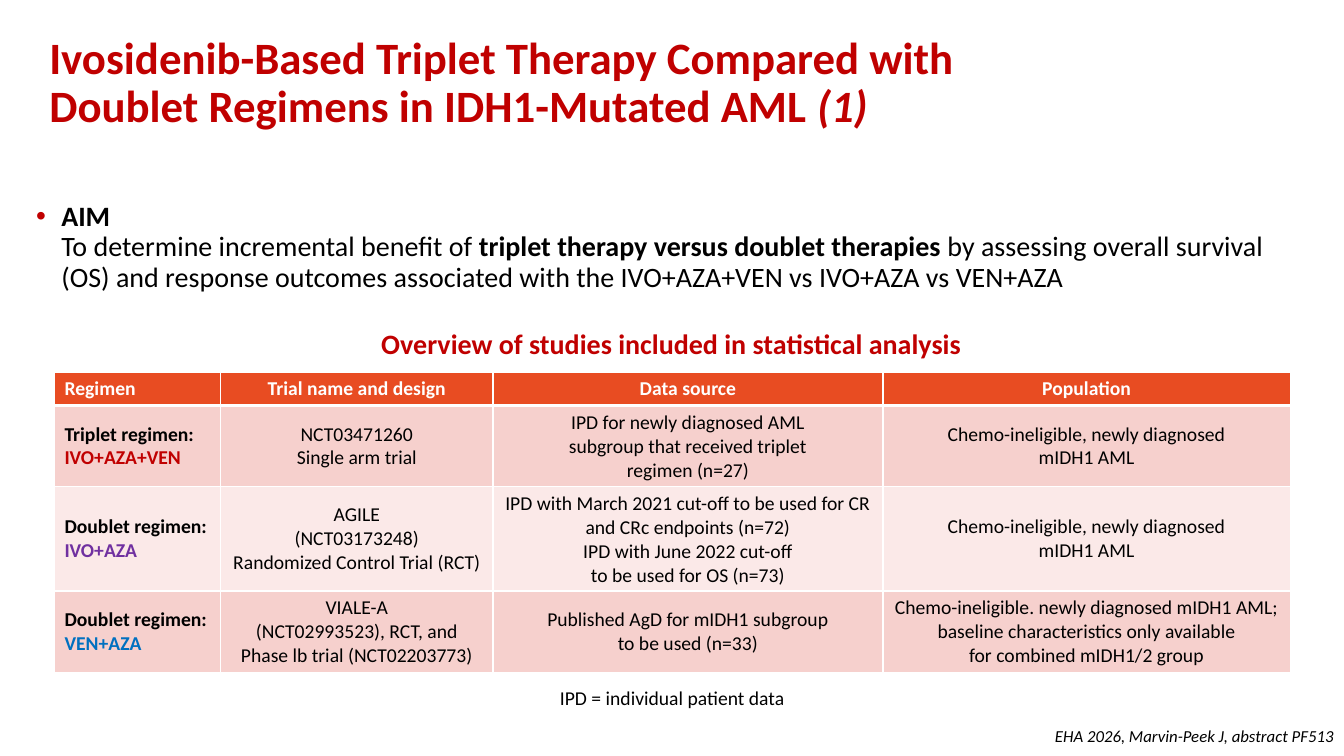
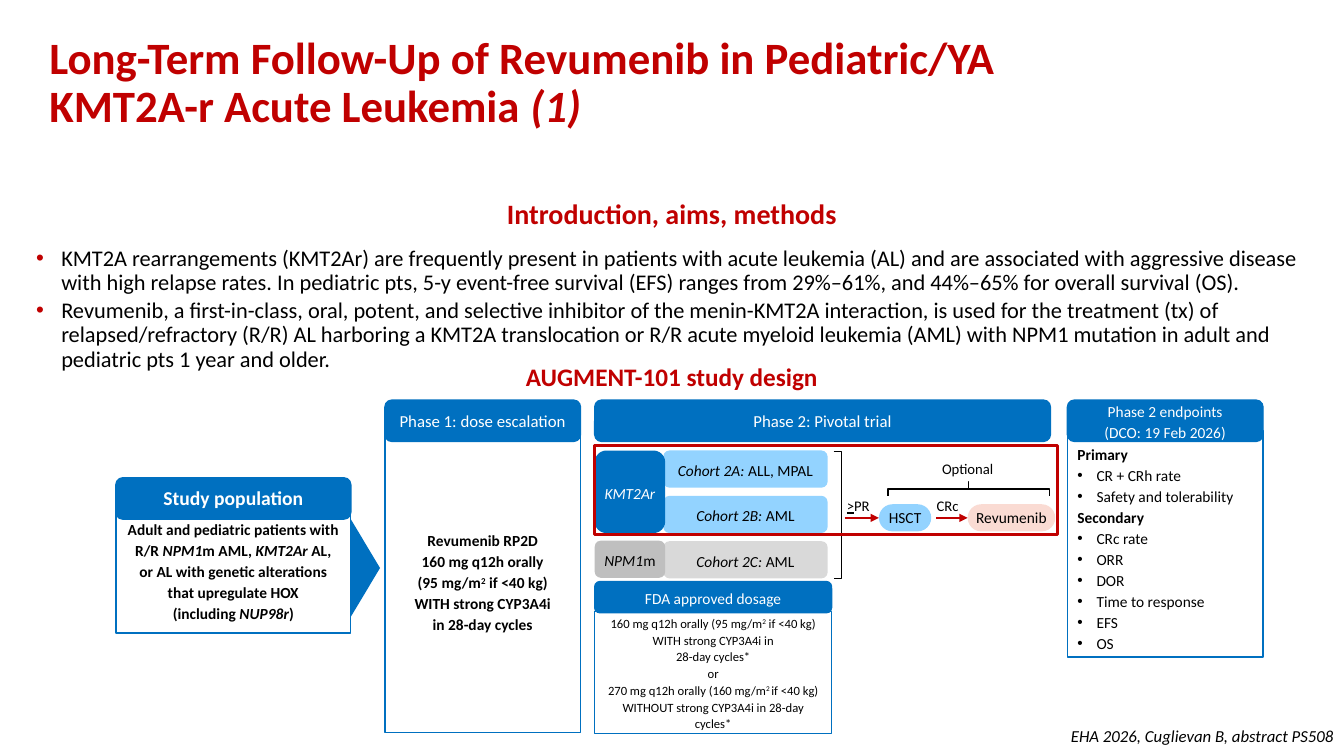
from pptx import Presentation
from pptx.dml.color import RGBColor
from pptx.enum.shapes import MSO_CONNECTOR as Line, MSO_SHAPE as Kind
from pptx.enum.text import MSO_ANCHOR as Anchor, MSO_AUTO_SIZE as Fit, PP_ALIGN as Align
from pptx.oxml import parse_xml
from pptx.oxml.ns import nsdecls
from pptx.util import Pt

HUES = {
    "red": "C00000", "black": "000000", "white": "FFFFFF", "blue": "0070C0",
    "sky": "93D3FF", "grey": "D9D9D9", "steel": "BFBFBF", "blush": "FADBD3",
    "orange": "E84C22", "rose": "F6D0CD", "pale": "FBE9E8", "plum": "7030A0",
}
FACE = "Calibri"


def hue(name):
    return RGBColor.from_string(HUES[name])


def node(tag, attrs="", inner=""):
    return parse_xml(f"<a:{tag} {nsdecls('a')} {attrs}>{inner}</a:{tag}>")


# Text
def style(run, size, color, marks):
    font = run.font
    font.name, font.size, font.color.rgb = FACE, Pt(size), hue(color)
    font.bold, font.italic = "b" in marks, "i" in marks
    if "u" in marks:
        font.underline = True
    if "^" in marks:
        run._r.get_or_add_rPr().set("baseline", "30000")


def bullet(para, dent, color):
    props = para._p.get_or_add_pPr()
    props.set("marL", str(Pt(dent)))
    props.set("indent", str(-Pt(dent)))
    props.append(node("buClr", inner=f'<a:srgbClr val="{HUES[color]}"/>'))
    props.append(node("buFont", 'typeface="Arial"'))
    props.append(node("buChar", 'char="•"'))


def put(frame, lines, size, color="black", marks="", align=Align.CENTER,
        lead=None, gap=0, dent=13.7, dot="black"):
    """A line is text or a list of (text, marks); a leading • makes a bullet."""
    for i, line in enumerate(lines):
        para = frame.add_paragraph() if i else frame.paragraphs[0]
        parts = [(line, "")] if isinstance(line, str) else line
        if parts[0][0].startswith("•"):
            bullet(para, dent, dot)
            parts = [(parts[0][0][1:], parts[0][1])] + parts[1:]
        para.alignment, para.line_spacing = align, lead
        para.space_before = Pt(gap if i else 0)
        for text, extra in parts:
            if text == "\n":
                para.add_line_break()
                continue
            run = para.add_run()
            run.text = text
            style(run, size, color, marks + extra)


def label(slide, box, lines, size, wrap=False, **look):
    frame = slide.shapes.add_textbox(*map(Pt, box)).text_frame
    frame.word_wrap = wrap
    put(frame, lines, size, **look)


# Shapes
def block(slide, kind, box, fill=None, line=None, width=1.0):
    shape = slide.shapes.add_shape(kind, *map(Pt, box))
    shape.shadow.inherit = False
    if fill:
        shape.fill.solid()
        shape.fill.fore_color.rgb = hue(fill)
    else:
        shape.fill.background()
    if line:
        shape.line.color.rgb = hue(line)
        shape.line.width = Pt(width)
    else:
        shape.line.fill.background()
    return shape


def tile(slide, box, fill, lines, size=11, line=None, kind=Kind.ROUNDED_RECTANGLE,
         side=7.2, anchor=Anchor.MIDDLE, lead=Pt(15), **look):
    shape = block(slide, kind, box, fill, line)
    frame = shape.text_frame
    frame.word_wrap, frame.vertical_anchor = True, anchor
    frame.margin_left = frame.margin_right = Pt(side)
    put(frame, lines, size, lead=lead, **look)
    return shape


def header(slide, box, lines, size, marks=""):
    tile(slide, box, "blue", lines, size, "blue", color="white", marks=marks)


def card(slide, box, head, large, lines, tall=29.5, bold="", **look):
    x, y, w, h = box
    drop = 21.6
    tile(slide, (x, y + drop, w, h - drop), "white", lines, line="blue",
         kind=Kind.RECTANGLE, **look)
    header(slide, (x, y, w, tall), head, large, bold)


def arrow(slide, start, end, y, goal):
    line = slide.shapes.add_connector(Line.STRAIGHT, Pt(start), Pt(y), Pt(end), Pt(y))
    line.end_connect(goal, 1)
    line.line.color.rgb, line.line.width = hue("red"), Pt(1.5)
    line.line._get_or_add_ln().append(node("tailEnd", 'type="triangle"'))
    line._element.spPr.append(node("effectLst"))


# Shared parts of a slide
def start(deck, title, source):
    slide = deck.slides.add_slide(deck.slide_layouts[5])
    head = slide.shapes.title
    head.left, head.top, head.width, head.height = map(Pt, (0, -1, 741, 122))
    frame = head.text_frame
    frame.word_wrap, frame.auto_size = True, Fit.NONE
    frame.vertical_anchor = Anchor.MIDDLE
    put(frame, [[(title + " ", ""), ("(1)", "i")]], 32, "red", "b", Align.LEFT, 0.9)
    frame.paragraphs[0]._p.get_or_add_pPr().set("marL", str(Pt(28)))
    label(slide, (744, 515, 216, 22), [source], 12, marks="i", align=Align.RIGHT)
    return slide


def points(slide, box, lines, size):
    label(slide, box, lines, size, wrap=True, align=Align.LEFT, lead=0.9,
          gap=3, dent=18, dot="red")


def caption(slide, box, text, size):
    label(slide, box, [text], size, color="red", marks="b")


# Table of studies
def border(cell, top, low):
    props = cell._tc.get_or_add_tcPr()
    paint = f'<a:solidFill><a:srgbClr val="{HUES["white"]}"/></a:solidFill>'
    for i, (side, width) in enumerate(zip("LRTB", (1, 1, top, low))):
        props.insert(i, node(f"ln{side}", f'w="{Pt(width)}"', paint))


def studies(slide, box, rows, tints):
    widths, heights = (118.8, 194.4, 278.6, 290.9), (24, 58, 74, 58)
    table = slide.shapes.add_table(len(rows), len(widths), *map(Pt, box)).table
    for col, width in zip(table.columns, widths):
        col.width = Pt(width)
    for i, row in enumerate(rows):
        table.rows[i].height = Pt(heights[i])
        for j, text in enumerate(row):
            cell = table.cell(i, j)
            cell.vertical_anchor = Anchor.MIDDLE
            cell.fill.solid()
            cell.fill.fore_color.rgb = hue(
                "orange" if i == 0 else "rose" if i % 2 else "pale")
            border(cell, 3 if i == 1 else 1, 1 if i else 3)
            put(cell.text_frame, text.split("\n"), 14, "black" if i else "white",
                "" if i and j else "b", Align.CENTER if j else Align.LEFT)
        if i:
            name = table.cell(i, 0).text_frame.paragraphs[1].runs[0]
            name.font.color.rgb = hue(tints[i - 1])


# Phase 2 flow
def pivotal(slide, x, y):
    header(slide, (x, y, 325.5, 29.5), ["Phase 2: Pivotal trial"], 12)
    cohorts = (("A", "ALL, MPAL", "sky"), ("B", "AML", "sky"), ("C", "AML", "grey"))
    for i, (mark, group, fill) in enumerate(cohorts):
        tile(slide, (x + 49, y + 36 + 32.4 * i, 117.4, 26.6), fill,
             [[(f"Cohort 2{mark}: ", "i"), (group, "")]])
    tile(slide, (x, y + 36, 50.4, 59), "blue", ["KMT2Ar"], side=2.9,
         color="white", marks="i")
    tile(slide, (x, y + 100.4, 50.4, 26.6), "steel", [[("NPM1", "i"), ("m", "")]],
         side=2.9)
    # Steps after response
    for left, top, width, text in ((172.8, 65.5, 31, [(">", "u"), ("PR", "")]),
                                   (236.9, 65.5, 30.2, "CRc"),
                                   (240.5, 38.9, 51.8, "Optional")):
        label(slide, (x + left, y + top, width, 20.2), [text], 10.5)
    pills = [tile(slide, (x + left, y + 74.4, width, 19.4), fill, [text],
                  side=2.9, lead=None)
             for left, width, fill, text in ((203, 37.4, "sky", "HSCT"),
                                             (266.4, 62.6, "blush", "Revumenib"))]
    for pill in pills:
        pill.adjustments[0] = 0.5
    arrow(slide, x + 178.6, x + 203, y + 84.1, pills[0])
    arrow(slide, x + 244, x + 266.4, y + 84.1, pills[1])
    # Brackets and frame
    clasp = block(slide, Kind.RIGHT_BRACKET, (x + 170.6, y + 36.7, 5.8, 90.7),
                  line="black")
    clasp.adjustments[0] = 0
    brace = block(slide, Kind.RIGHT_BRACE, (x + 262.1, y + 5.8, 10.1, 115.2),
                  line="black")
    brace.adjustments[0], brace.rotation = 0, 270
    block(slide, Kind.RECTANGLE, (x, y + 32.4, 330.5, 63.4), line="red", width=2.25)


# Slides
def triplet(deck):
    slide = start(deck, "Ivosidenib-Based Triplet Therapy Compared with Doublet "
                  "Regimens in IDH1-Mutated AML",
                  "EHA 2026, Marvin-Peek J, abstract PF513")
    points(slide, (18.7, 141, 923, 374), [[
        ("•AIM", "b"), ("\n", ""), ("To determine incremental benefit of ", ""),
        ("triplet therapy versus doublet therapies ", "b"),
        ("by assessing overall survival (OS) and response outcomes associated with "
         "the IVO+AZA+VEN vs IVO+AZA vs VEN+AZA", "")]], 20)
    caption(slide, (263.5, 229.7, 432, 31.7),
            "Overview of studies included in statistical analysis", 20)
    ready = "Chemo-ineligible, newly diagnosed\nmIDH1 AML"
    studies(slide, (38.9, 265.7, 882.7, 214), (
        ("Regimen", "Trial name and design", "Data source", "Population"),
        ("Triplet regimen:\nIVO+AZA+VEN", "NCT03471260\nSingle arm trial",
         "IPD for newly diagnosed AML\nsubgroup that received triplet\n"
         "regimen (n=27)", ready),
        ("Doublet regimen:\nIVO+AZA",
         "AGILE\n(NCT03173248)\nRandomized Control Trial (RCT)",
         "IPD with March 2021 cut-off to be used for CR\nand CRc endpoints (n=72)\n"
         "IPD with June 2022 cut-off\nto be used for OS (n=73)", ready),
        ("Doublet regimen:\nVEN+AZA",
         "VIALE-A\n(NCT02993523), RCT, and\nPhase lb trial (NCT02203773)",
         "Published AgD for mIDH1 subgroup\nto be used (n=33)",
         "Chemo-ineligible. newly diagnosed mIDH1 AML;\nbaseline characteristics "
         "only available\nfor combined mIDH1/2 group"),
    ), ("red", "plum", "blue"))
    label(slide, (391.7, 486.7, 177, 24.5), ["IPD = individual patient data"], 14)


def design(deck):
    slide = start(deck, "Long-Term Follow-Up of Revumenib in Pediatric/YA KMT2A-r "
                  "Acute Leukemia", "EHA 2026, Cuglievan B, abstract PS508")
    caption(slide, (247.7, 136.8, 464.4, 31.7), "Introduction, aims, methods", 20)
    points(slide, (18.7, 172.8, 931, 97.2), [
        "•KMT2A rearrangements (KMT2Ar) are frequently present in patients with acute "
        "leukemia (AL) and are associated with aggressive disease with high relapse "
        "rates. In pediatric pts, 5-y event-free survival (EFS) ranges from 29%–61%, "
        "and 44%–65% for overall survival (OS).",
        "•Revumenib, a first-in-class, oral, potent, and selective inhibitor of the "
        "menin-KMT2A interaction, is used for the treatment (tx) of "
        "relapsed/refractory (R/R) AL harboring a KMT2A translocation or R/R acute "
        "myeloid leukemia (AML) with NPM1 mutation in adult and pediatric pts 1 year "
        "and older."], 16)
    caption(slide, (247.7, 254.2, 464.4, 28.8), "AUGMENT-101 study design", 18)
    # Study cards
    top = 285.8
    card(slide, (82.8, 341.3, 167.8, 110.9), ["Study population"], 14, [
        [("Adult and pediatric patients with R/R ", ""), ("NPM1", "i"),
         ("m AML, ", ""), ("KMT2Ar", "i"), (" AL,", "")],
        "or AL with genetic alterations that upregulate HOX",
        [("(including ", ""), ("NUP98r", "i"), (")", "")]], bold="b", marks="b")
    card(slide, (275, top, 139.7, 237.6), ["Phase 1: dose escalation"], 12, [
        "Revumenib RP2D", "160 mg q12h orally",
        [("(95 mg/m", ""), ("2", "^"), (" if <40 kg)", "")],
        "WITH strong CYP3A4i", "in 28-day cycles"], marks="b")
    card(slide, (424.8, 415.4, 169.2, 108.7), ["FDA approved dosage"], 11, [
        [("160 mg q12h orally (95 mg/m", ""), ("2", "^"),
         (" if <40 kg) WITH strong CYP3A4i in", "")],
        "28-day cycles*", "or",
        [("270 mg q12h orally (160 mg/m", ""), ("2 ", "^"),
         ("if <40 kg) WITHOUT strong CYP3A4i in 28-day cycles*", "")]],
        tall=22.3, size=9, lead=Pt(12))
    pivotal(slide, 424.8, top)
    card(slide, (762.5, top, 139.7, 183.6),
         ["Phase 2 endpoints", "(DCO: 19 Feb 2026)"], 11, [
             [("Primary", "b")], "•CR + CRh rate", "•Safety and tolerability",
             [("Secondary", "b")], "•CRc rate", "•ORR", "•DOR",
             "•Time to response", "•EFS", "•OS"],
         anchor=Anchor.BOTTOM, align=Align.LEFT)
    # Pointer from population to phase 1
    point = block(slide, Kind.ISOSCELES_TRIANGLE, (226.1, 395.3, 69.8, 20.9), "blue")
    point.rotation = 90


def main():
    deck = Presentation()
    deck.slide_width, deck.slide_height = Pt(960), Pt(540)
    triplet(deck)
    design(deck)
    deck.save("out.pptx")


if __name__ == "__main__":
    main()
